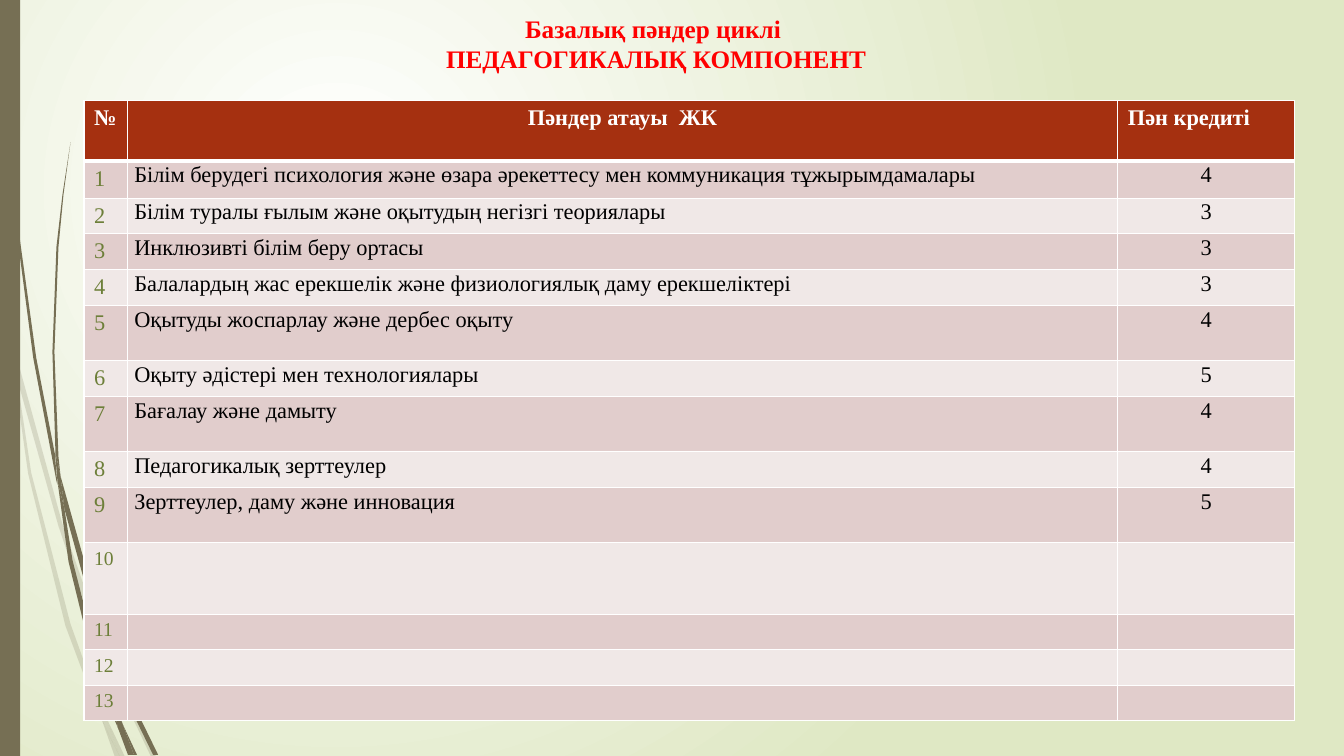
from lxml import etree
from pptx import Presentation
from pptx.dml.color import RGBColor
from pptx.enum.shapes import MSO_SHAPE
from pptx.enum.text import MSO_ANCHOR, PP_ALIGN
from pptx.oxml.ns import qn
from pptx.util import Pt

RECTANGLE = MSO_SHAPE.RECTANGLE
LEFT, CENTER = PP_ALIGN.LEFT, PP_ALIGN.CENTER
MIDDLE = MSO_ANCHOR.MIDDLE

FONT = "Times New Roman"
BARK, RED, RUST, OLIVE = "766F54", "FF0000", "A53010", "6D7F39"
WHITE, BLACK, MEADOW = "FFFFFF", "000000", "DFE8C4"
BANDS = ("E1CDCC", "F0E8E7")

TITLE = ("Базалық пәндер циклі ", "ПЕДАГОГИКАЛЫҚ КОМПОНЕНТ")
HEADER = ("№", "Пәндер атауы  ЖК", "Пән кредиті")
SUBJECTS = [
    ("Білім берудегі психология және өзара әрекеттесу мен коммуникация тұжырымдамалары", "4"),
    ("Білім туралы ғылым және оқытудың негізгі теориялары", "3"),
    ("Инклюзивті білім беру ортасы", "3"),
    ("Балалардың жас ерекшелік және физиологиялық даму ерекшеліктері", "3"),
    ("Оқытуды жоспарлау және дербес оқыту", "4"),
    ("Оқыту әдістері мен технологиялары", "5"),
    ("Бағалау және дамыту", "4"),
    ("Педагогикалық зерттеулер", "4"),
    ("Зерттеулер, даму және инновация", "5"),
    ("", ""), ("", ""), ("", ""), ("", ""),
]
COLUMN_WIDTHS = (31, 707.5, 126)
ROW_HEIGHTS = (43.2, 26.4, 25.4, 25.4, 25.7, 39.6, 25.4, 39.6, 25.4, 39.6, 51, 25.4, 25.4, 25.4)

GRASS_UNIT = 0.72
PALE_GRASS = [
    [(11, 350), (9, 322), (0, 282), (0, 299), (10, 344)],
    [(58, 522), (84, 599), (85, 586), (62, 520), (14, 345), (17, 376)],
    [(92, 607), (88, 596), (88, 610), (123, 694), (150, 751), (155, 751), (127, 692)],
    [(119, 751), (124, 751), (105, 711)],
    [(93, 683), (70, 619), (31, 469), (17, 376), (11, 350), (28, 470), (65, 621),
     (92, 693), (101, 714), (99, 707)],
    [(84, 599), (87, 646), (93, 683), (96, 692), (105, 711), (103, 706), (91, 646),
     (88, 610), (88, 608)],
    [(88, 584), (110, 462), (160, 349), (229, 245), (268, 198), (290, 175), (312, 154),
     (312, 153), (289, 175), (268, 197), (228, 244), (158, 348), (107, 461), (85, 584),
     (85, 586), (88, 596)],
    [(101, 714), (114, 751), (119, 751)],
    [(88, 608), (88, 610), (88, 596), (85, 586), (84, 599)],
    [(96, 692), (93, 683), (99, 707), (101, 714), (119, 751), (105, 711)],
]
DARK_GRASS = [
    [(7, 110), (17, 233), (33, 355), (56, 477), (57, 481), (55, 457), (55, 453),
     (36, 355), (19, 232), (8, 109), (5, 48), (4, 0), (3, 0), (4, 48)],
    [(88, 592), (106, 645), (106, 633), (106, 631), (93, 590), (60, 472), (64, 505)],
    [(113, 649), (110, 641), (111, 656), (132, 708), (152, 749), (157, 749), (136, 706)],
    [(110, 691), (98, 657), (72, 556), (64, 505), (57, 477), (68, 557), (93, 659),
     (111, 708), (117, 722), (116, 717)],
    [(60, 472), (58, 453), (54, 349), (58, 245), (63, 193), (70, 141), (62, 193),
     (56, 245), (52, 349), (55, 449)],
    [(133, 749), (136, 749), (122, 719)],
    [(57, 477), (64, 505), (60, 472), (55, 449), (55, 453)],
    [(111, 633), (125, 552), (158, 476), (205, 406), (231, 374), (245, 359), (261, 344),
     (260, 344), (245, 358), (231, 373), (204, 405), (156, 474), (122, 551), (106, 631),
     (110, 641)],
    [(117, 722), (127, 749), (131, 749)],
    [(106, 645), (110, 691), (116, 706), (122, 719), (121, 716), (111, 656), (109, 651)],
    [(106, 645), (109, 651), (111, 656), (110, 641), (106, 631), (106, 633)],
    [(116, 706), (110, 691), (116, 717), (117, 722), (130, 749), (133, 749), (122, 719)],
]


def rgb(value):
    return RGBColor.from_string(value)


def paint(shape, color, opacity=100):
    shape.shadow.inherit = False
    shape.line.fill.background()
    shape.fill.solid()
    shape.fill.fore_color.rgb = rgb(color)
    if opacity < 100:
        tint = shape._element.spPr.find(".//" + qn("a:srgbClr"))
        etree.SubElement(tint, qn("a:alpha"), val=str(opacity * 1000))


def write(frame, lines, size=16, color=BLACK, bold=False, align=LEFT, spacing=None, after=None):
    para = frame.paragraphs[0]
    para.alignment = align
    para.line_spacing = spacing
    para.space_after = after
    for number, line in enumerate(lines):
        if number:
            para.add_line_break()
        span = para.add_run()
        span.text = line
        span.font.name = FONT
        span.font.size = Pt(size)
        span.font.bold = bold
        span.font.color.rgb = rgb(color)


def draw_background(page):
    fill = page.background.fill
    fill.gradient()
    for stop, color, position in zip(fill.gradient_stops, (WHITE, MEADOW), (0, 1)):
        stop.color.rgb = rgb(color)
        stop.position = position
    linear = page._element.find(".//" + qn("a:lin"))
    circle = etree.Element(qn("a:path"), path="circle")
    etree.SubElement(circle, qn("a:fillToRect"), l="50000", t="50000", r="100000", b="100000")
    linear.getparent().replace(linear, circle)


def draw_grass(page, blades, opacity):
    for blade in blades:
        builder = page.shapes.build_freeform(*blade[0], scale=float(Pt(GRASS_UNIT)))
        builder.add_line_segments(blade[1:], close=True)
        paint(builder.convert_to_shape(), BARK, opacity)


def fill_cell(cell, color, bottom_width):
    cell.fill.solid()
    cell.fill.fore_color.rgb = rgb(color)
    properties = cell._tc.get_or_add_tcPr()
    for position, side in enumerate("LRTB"):
        width = bottom_width if side == "B" else 1
        border = etree.Element(qn("a:ln" + side), w=str(Pt(width)))
        solid = etree.SubElement(border, qn("a:solidFill"))
        etree.SubElement(solid, qn("a:srgbClr"), val=WHITE)
        properties.insert(position, border)


def draw_table(page):
    table = page.shapes.add_table(
        len(ROW_HEIGHTS), len(COLUMN_WIDTHS), Pt(60), Pt(72),
        Pt(sum(COLUMN_WIDTHS)), Pt(sum(ROW_HEIGHTS))).table
    for column, width in zip(table.columns, COLUMN_WIDTHS):
        column.width = Pt(width)
    for row, height in zip(table.rows, ROW_HEIGHTS):
        row.height = Pt(height)
    for column, text in enumerate(HEADER):
        cell = table.cell(0, column)
        fill_cell(cell, RUST, 3)
        write(cell.text_frame, [text], color=WHITE, bold=True,
              align=CENTER if column == 1 else LEFT)
    for number, (subject, credits) in enumerate(SUBJECTS, 1):
        for column, text in enumerate((str(number), subject, credits)):
            cell = table.cell(number, column)
            fill_cell(cell, BANDS[(number - 1) % 2], 1)
            if column == 0:
                write(cell.text_frame, [text], size=16 if subject else 14, color=OLIVE)
                continue
            cell.margin_left = cell.margin_right = Pt(5)
            cell.margin_top = cell.margin_bottom = 0
            if text:
                write(cell.text_frame, [text], align=CENTER if column == 2 else LEFT,
                      spacing=1.07, after=Pt(8))


def draw_title(page):
    title = page.shapes.title
    title.left, title.top, title.width, title.height = Pt(54.7), Pt(8), Pt(828), Pt(46)
    frame = title.text_frame
    frame.margin_left = frame.margin_right = frame.margin_top = frame.margin_bottom = 0
    frame.vertical_anchor = MIDDLE
    write(frame, TITLE, size=18, color=RED, bold=True, align=CENTER)


def main():
    deck = Presentation()
    deck.slide_width, deck.slide_height = Pt(960), Pt(540)
    page = deck.slides.add_slide(deck.slide_layouts[5])
    draw_background(page)
    draw_grass(page, PALE_GRASS, 20)
    draw_grass(page, DARK_GRASS, 100)
    paint(page.shapes.add_shape(RECTANGLE, 0, 0, Pt(14.4), Pt(540)), BARK)
    draw_title(page)
    draw_table(page)
    deck.save("out.pptx")


if __name__ == "__main__":
    main()
